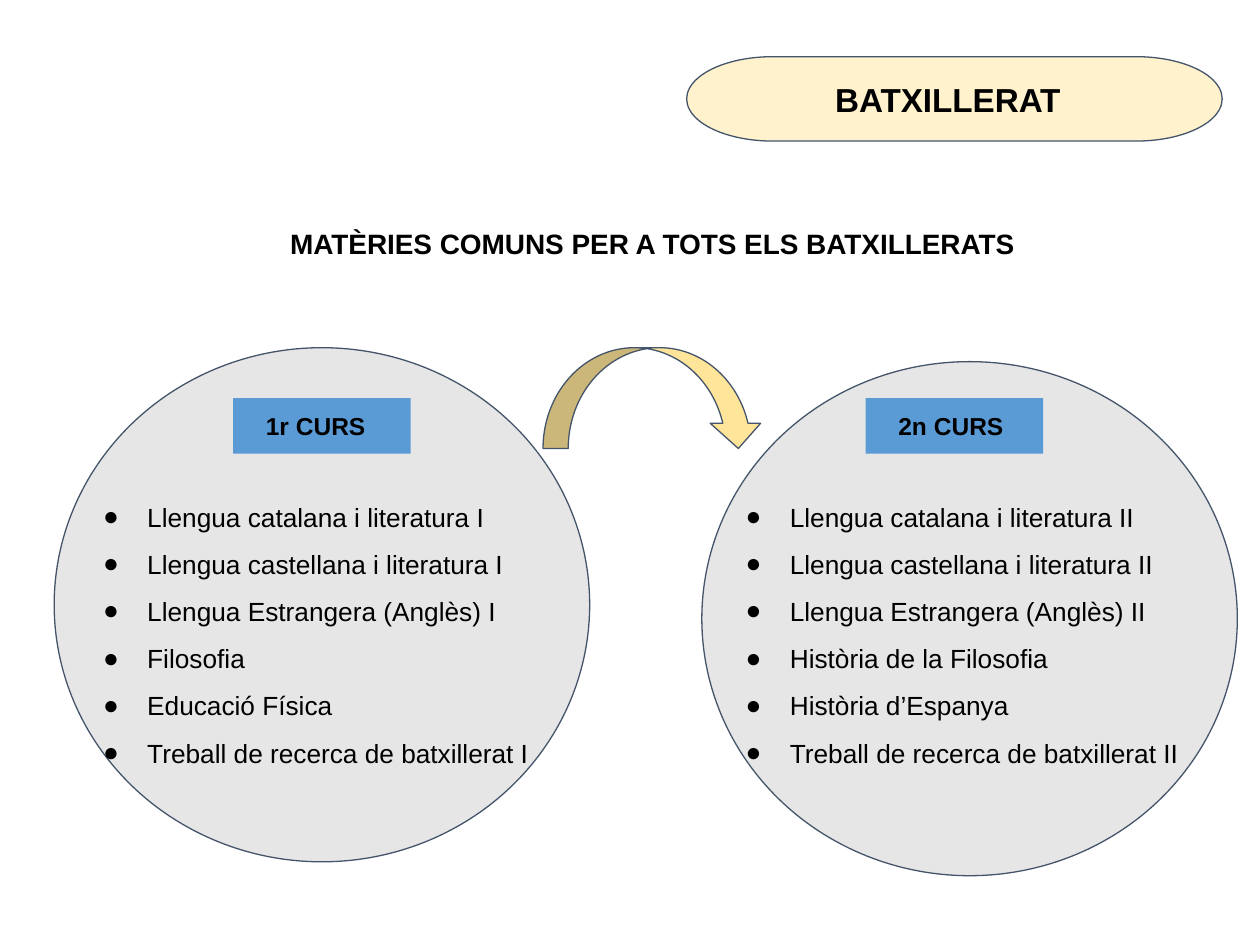
from dataclasses import dataclass

from lxml.etree import SubElement
from pptx import Presentation
from pptx.dml.color import RGBColor
from pptx.enum.shapes import MSO_SHAPE as Preset
from pptx.enum.text import MSO_ANCHOR as Anchor, MSO_AUTO_SIZE as AutoSize, PP_ALIGN as Align
from pptx.oxml.ns import qn
from pptx.shapes.autoshape import Shape
from pptx.slide import Slide
from pptx.text.text import TextFrame, _Paragraph as Paragraph
from pptx.util import Emu, Inches, Pt

WIDTH, HEIGHT = Inches(10), Inches(7.5)
COLUMNS, ROWS = 100, 75
FONT = "Arial"
COLORS = {
    "text": "000000",
    "outline": "44546A",
    "circle": "E7E6E6",
    "arrow": "FFE599",
    "label": "5B9BD5",
    "banner": "FFF2CC",
}


@dataclass(frozen=True)
class Box:
    """A place on the grid, in columns and rows."""
    column: float
    row: float
    columns: float
    rows: float

    def lengths(self) -> tuple[Emu, Emu, Emu, Emu]:
        """Return left, top, width and height."""
        return (
            Emu(round(WIDTH * self.column / COLUMNS)),
            Emu(round(HEIGHT * self.row / ROWS)),
            Emu(round(WIDTH * self.columns / COLUMNS)),
            Emu(round(HEIGHT * self.rows / ROWS)),
        )


@dataclass(frozen=True)
class Course:
    """One school year with its circle, label and subjects."""
    label: str
    circle: Box
    label_column: float
    list_column: float
    subjects: tuple[str, ...]


COURSES = (
    Course("1r CURS", Box(4.3, 27.6, 42.5, 40.8), 18.5, 5.7, (
        "Llengua catalana i literatura I",
        "Llengua castellana i literatura I",
        "Llengua Estrangera (Anglès) I",
        "Filosofia",
        "Educació Física",
        "Treball de recerca de batxillerat I",
    )),
    Course("2n CURS", Box(55.7, 28.7, 42.5, 40.8), 68.7, 56.7, (
        "Llengua catalana i literatura II",
        "Llengua castellana i literatura II",
        "Llengua Estrangera (Anglès) II",
        "Història de la Filosofia",
        "Història d’Espanya",
        "Treball de recerca de batxillerat II",
    )),
)


def color(name: str) -> RGBColor:
    """Look up a named colour."""
    return RGBColor.from_string(COLORS[name])


def prepare_frame(frame: TextFrame, left: float = 0.1) -> None:
    """Set the margins, wrapping and top anchor of a text frame."""
    frame.margin_left = Inches(left)
    frame.margin_right = frame.margin_top = frame.margin_bottom = Inches(0.1)
    frame.word_wrap = True
    frame.auto_size = AutoSize.NONE
    frame.vertical_anchor = Anchor.TOP


def add_run(paragraph: Paragraph, text: str, size: float, bold: bool = False) -> None:
    """Add one formatted run to a paragraph."""
    run = paragraph.add_run()
    run.text = text
    run.font.name = FONT
    run.font.size = Pt(size)
    run.font.bold = bold
    run.font.color.rgb = color("text")


def add_preset(slide: Slide, preset: Preset, box: Box, fill: str, outlined: bool = True) -> Shape:
    """Add a flat preset shape."""
    shape = slide.shapes.add_shape(preset, *box.lengths())
    shape.shadow.inherit = False
    shape.fill.solid()
    shape.fill.fore_color.rgb = color(fill)
    if outlined:
        shape.line.color.rgb = color("outline")
        shape.line.width = Pt(0.75)
    else:
        shape.line.fill.background()
    return shape


def add_title(slide: Slide, text: str, box: Box) -> None:
    """Place and fill the title placeholder."""
    title = slide.shapes.title
    title.left, title.top, title.width, title.height = box.lengths()
    prepare_frame(title.text_frame)
    paragraph = title.text_frame.paragraphs[0]
    paragraph.alignment = Align.CENTER
    add_run(paragraph, text, 16, bold=True)


def add_bullet(paragraph: Paragraph) -> None:
    """Give a paragraph a hanging round bullet."""
    properties = paragraph._p.get_or_add_pPr()
    properties.set("marL", str(Inches(0.5)))
    properties.set("indent", str(Inches(-0.35)))
    bullet_color = SubElement(properties, qn("a:buClr"))
    SubElement(bullet_color, qn("a:srgbClr"), val=COLORS["text"])
    SubElement(properties, qn("a:buFont"), typeface=FONT)
    SubElement(properties, qn("a:buChar"), char="●")


def add_subjects(slide: Slide, course: Course) -> None:
    """Add the bulleted subjects of a course."""
    box = Box(course.list_column, 37.5, 41.1, 23.5)
    frame = slide.shapes.add_textbox(*box.lengths()).text_frame
    prepare_frame(frame)
    for index, subject in enumerate(course.subjects):
        paragraph = frame.add_paragraph() if index else frame.paragraphs[0]
        add_bullet(paragraph)
        paragraph.line_spacing = 1.5
        add_run(paragraph, subject, 15)


def add_label(slide: Slide, course: Course) -> None:
    """Add the name plate of a course."""
    box = Box(course.label_column, 31.6, 14.1, 4.4)
    frame = add_preset(slide, Preset.RECTANGLE, box, "label", outlined=False).text_frame
    prepare_frame(frame, left=0.26)
    frame.paragraphs[0].alignment = Align.LEFT
    add_run(frame.paragraphs[0], course.label, 14, bold=True)


def add_banner(slide: Slide, text: str) -> None:
    """Add the rounded banner and its heading."""
    add_preset(slide, Preset.FLOWCHART_TERMINATOR, Box(54.5, 4.5, 42.5, 6.7), "banner")
    frame = slide.shapes.add_textbox(*Box(65.3, 5.3, 20.9, 5.2).lengths()).text_frame
    prepare_frame(frame)
    add_run(frame.paragraphs[0], text, 19, bold=True)


def main() -> None:
    """Build and save the slide."""
    presentation = Presentation()
    presentation.slide_width, presentation.slide_height = WIDTH, HEIGHT
    slide = presentation.slides.add_slide(presentation.slide_layouts[5])
    add_title(slide, "MATÈRIES COMUNS PER A TOTS ELS BATXILLERATS", Box(20.8, 17, 62, 4.7))
    for course in COURSES:
        add_preset(slide, Preset.OVAL, course.circle, "circle")
    add_preset(slide, Preset.CURVED_DOWN_ARROW, Box(43.1, 27.6, 17.5, 8), "arrow")
    for course in COURSES:
        add_subjects(slide, course)
        add_label(slide, course)
    add_banner(slide, "BATXILLERAT")
    presentation.save("out.pptx")


if __name__ == "__main__":
    main()
